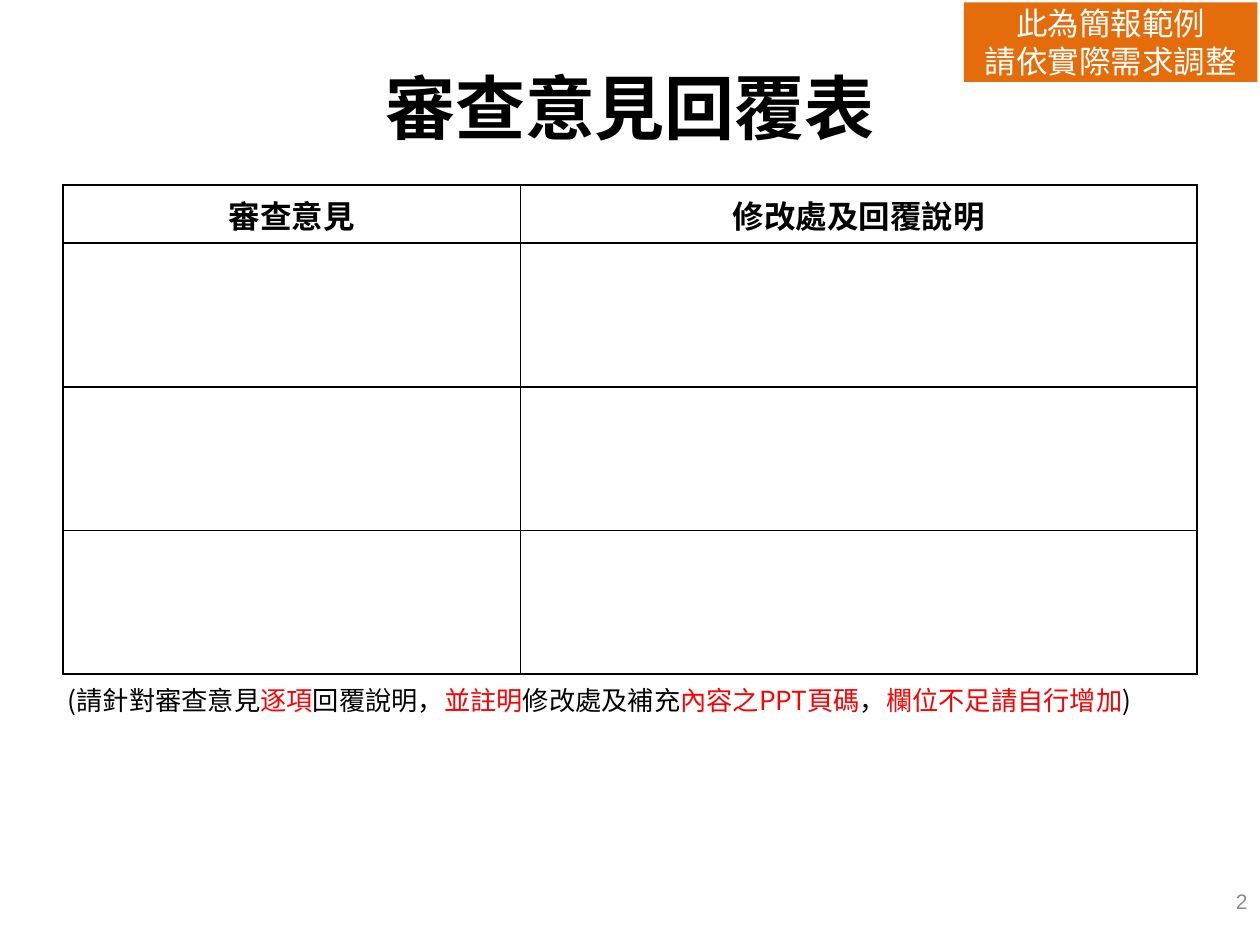
from typing import NamedTuple

from lxml.etree import SubElement
from pptx import Presentation
from pptx.dml.color import RGBColor
from pptx.enum.shapes import MSO_SHAPE
from pptx.enum.text import MSO_ANCHOR, PP_ALIGN
from pptx.oxml.ns import qn
from pptx.util import Inches, Pt

COLORS = {
    "black": "000000",
    "white": "FFFFFF",
    "red": "FF0000",
    "gray": "8C8C8C",
    "orange": "E46C0A",
}
CJK_FONT = "Noto Sans CJK SC"
LATIN_FONT = "Arial"


class Style(NamedTuple):
    size: float
    font: str
    color: str = "black"
    bold: bool = False


class Box(NamedTuple):
    left: float
    top: float
    width: float
    height: float

    def lengths(self) -> list:
        return [Inches(value) for value in self]


def color_of(name: str) -> RGBColor:
    return RGBColor.from_string(COLORS[name])


def add_run(paragraph, text: str, style: Style) -> None:
    run = paragraph.add_run()
    run.text = text
    run.font.size = Pt(style.size)
    run.font.bold = style.bold
    run.font.color.rgb = color_of(style.color)
    run.font.name = style.font
    SubElement(run.font._element, qn("a:ea")).set("typeface", CJK_FONT)


def add_text(slide, box: Box, runs: list, style: Style, alignment, anchor, inset: float = 0.05) -> None:
    frame = slide.shapes.add_textbox(*box.lengths()).text_frame
    frame.word_wrap = True
    frame.vertical_anchor = anchor
    frame.margin_top = frame.margin_bottom = Inches(inset)
    paragraph = frame.paragraphs[0]
    paragraph.alignment = alignment
    for text, color in runs:
        add_run(paragraph, text, style._replace(color=color))


def add_badge(slide, box: Box, lines: list, style: Style) -> None:
    badge = slide.shapes.add_shape(MSO_SHAPE.RECTANGLE, *box.lengths())
    badge.shadow.inherit = False
    badge.fill.solid()
    badge.fill.fore_color.rgb = color_of("orange")
    badge.line.fill.background()
    frame = badge.text_frame
    frame.vertical_anchor = MSO_ANCHOR.MIDDLE
    for index, line in enumerate(lines):
        paragraph = frame.paragraphs[0] if index == 0 else frame.add_paragraph()
        paragraph.alignment = PP_ALIGN.CENTER
        paragraph.line_spacing = Pt(21.7)
        add_run(paragraph, line, style)


def style_cell(cell) -> None:
    properties = cell._tc.get_or_add_tcPr()
    for side in ("lnL", "lnR", "lnT", "lnB"):
        border = SubElement(properties, qn(f"a:{side}"), w=str(Pt(1)))
        fill = SubElement(border, qn("a:solidFill"))
        SubElement(fill, qn("a:srgbClr"), val=COLORS["black"])
    cell.fill.background()


def add_reply_table(slide, box: Box, widths: list, heights: list, headers: list, style: Style) -> None:
    table = slide.shapes.add_table(len(heights), len(widths), *box.lengths()).table
    table.first_row = table.horz_banding = False
    for column, width in zip(table.columns, widths):
        column.width = Inches(width)
    for row, height in zip(table.rows, heights):
        row.height = Inches(height)
    for cell in table.iter_cells():
        style_cell(cell)
    for cell, header in zip(table.rows[0].cells, headers):
        paragraph = cell.text_frame.paragraphs[0]
        paragraph.alignment = PP_ALIGN.CENTER
        add_run(paragraph, header, style)


def main() -> None:
    presentation = Presentation()
    presentation.slide_width, presentation.slide_height = Inches(10), Inches(7.5)
    slide = presentation.slides.add_slide(presentation.slide_layouts[6])

    add_text(slide, Box(0.5, 0.22, 9, 1.25), [("審查意見回覆表", "black")],
             Style(40, CJK_FONT, bold=True), PP_ALIGN.CENTER, MSO_ANCHOR.MIDDLE)
    add_text(slide, Box(7.67, 6.95, 2.33, 0.4), [("2", "gray")],
             Style(12, LATIN_FONT), PP_ALIGN.RIGHT, MSO_ANCHOR.MIDDLE)
    add_badge(slide, Box(7.65, 0.02, 2.33, 0.63), ["此為簡報範例", "請依實際需求調整"],
              Style(18, LATIN_FONT, "white"))
    add_reply_table(slide, Box(0.5, 1.47, 9, 3.88), [3.63, 5.37], [0.46] + [1.14] * 3,
                    ["審查意見", "修改處及回覆說明"], Style(18, LATIN_FONT, bold=True))
    instructions = [
        ("(請針對審查意見", "black"),
        ("逐項", "red"),
        ("回覆說明，", "black"),
        ("並註明", "red"),
        ("修改處及補充", "black"),
        ("內容之PPT頁碼", "red"),
        ("，", "black"),
        ("欄位不足請自行增加", "red"),
        (")", "black"),
    ]
    add_text(slide, Box(0.44, 5.4, 9.03, 0.35), instructions,
             Style(15, CJK_FONT), PP_ALIGN.LEFT, MSO_ANCHOR.TOP, inset=0.03)
    presentation.save("out.pptx")


if __name__ == "__main__":
    main()
